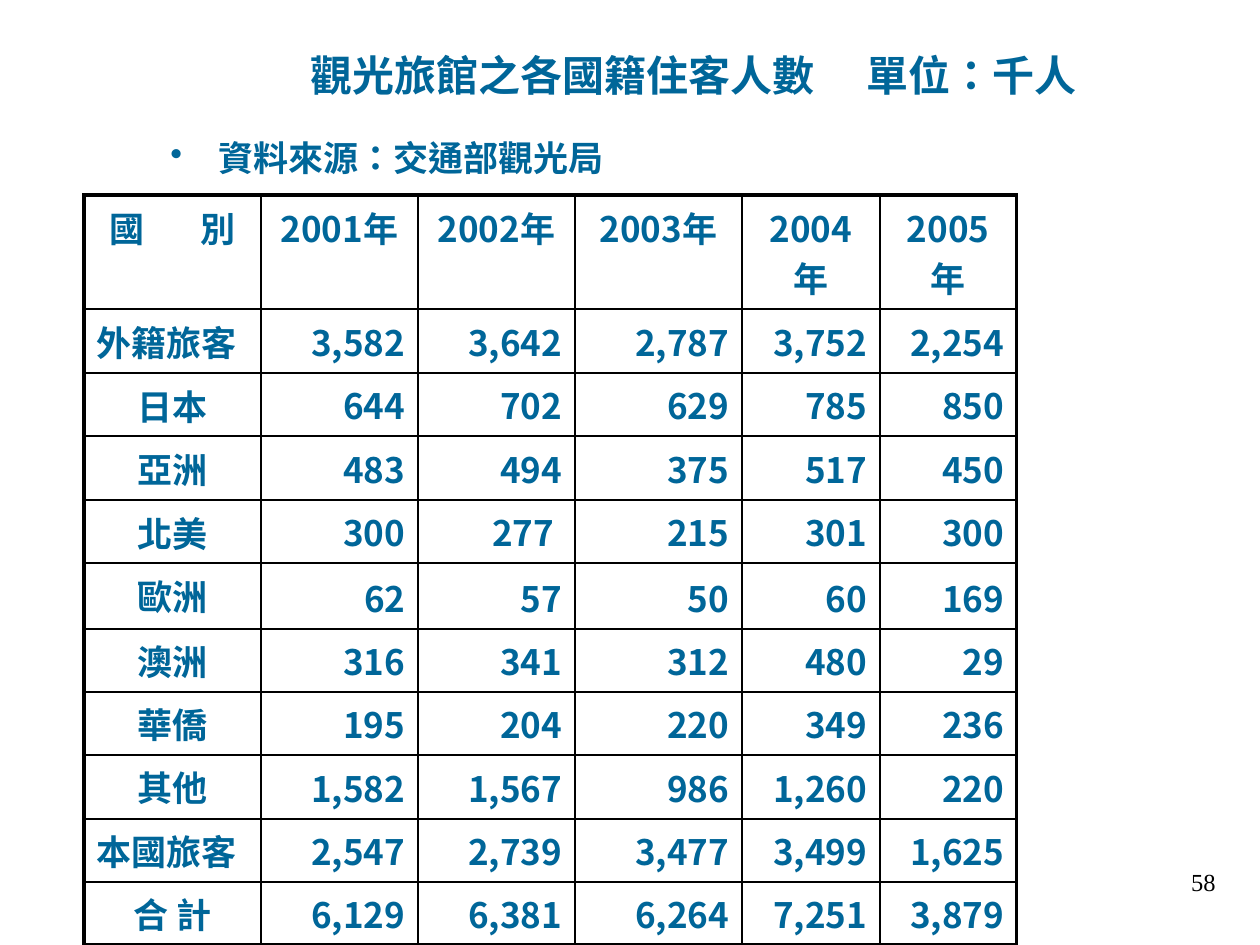
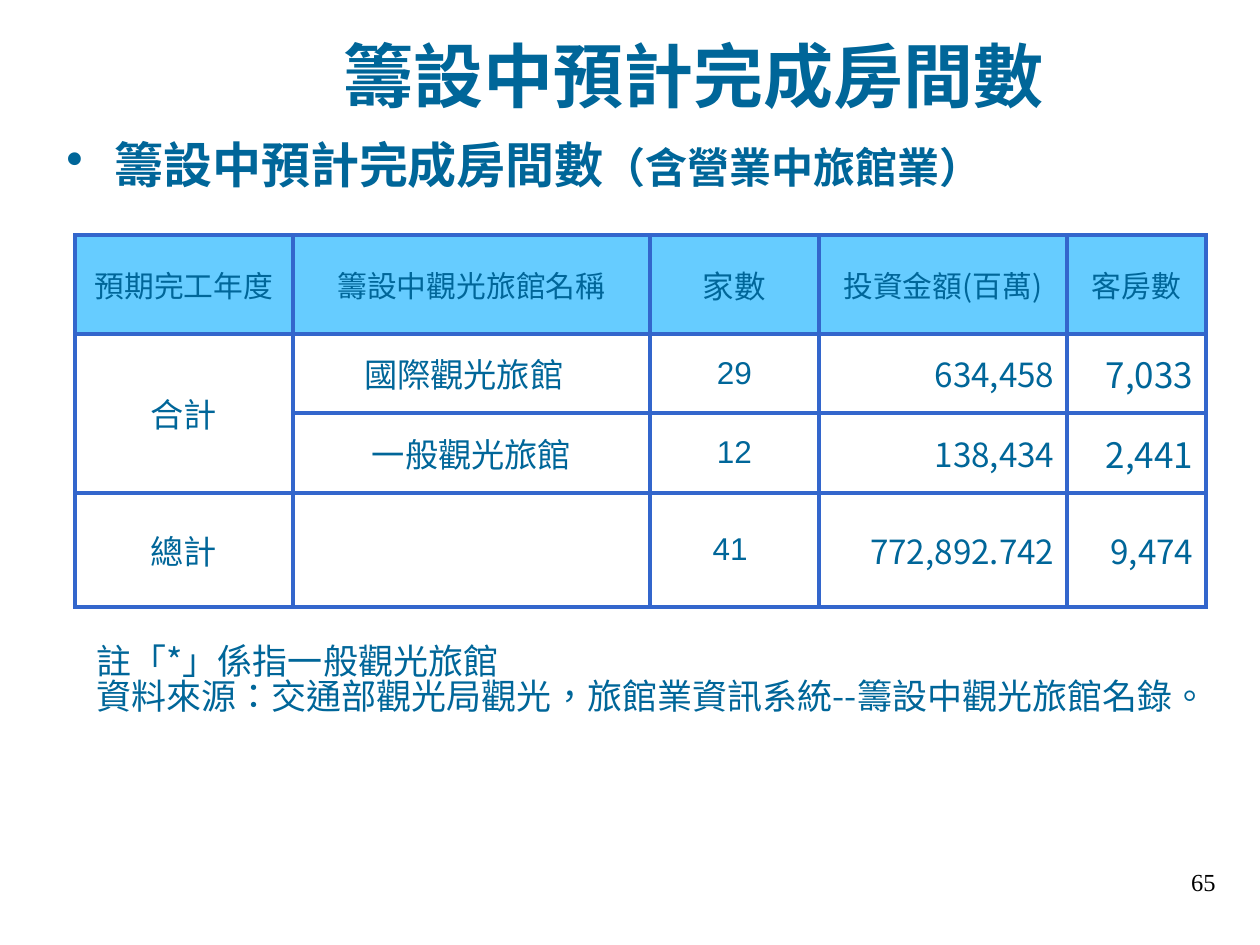
"""Builds two slides of hotel statistics, each with a table."""
from dataclasses import dataclass
from lxml.etree import SubElement
from pptx import Presentation
from pptx.dml.color import RGBColor
from pptx.enum.text import MSO_ANCHOR, PP_ALIGN
from pptx.oxml import parse_xml
from pptx.oxml.ns import nsdecls, qn
from pptx.util import Emu, Pt


@dataclass(frozen=True)
class Theme:
    """Colours, fonts and type sizes."""
    ink: str = "006699"
    black: str = "000000"
    head: str = "66CCFF"
    white: str = "FFFFFF"
    rule: str = "3366CC"
    serif: str = "Times New Roman"
    sans: str = "Arial"
    cjk: str = "Noto Sans CJK JP"
    han: str = "Noto Sans CJK SC"
    page: int = 14
    body: int = 20
    mid: int = 24
    lead: int = 28
    large: int = 40


T = Theme()
LEFT, MID, RIGHT = PP_ALIGN.LEFT, PP_ALIGN.CENTER, PP_ALIGN.RIGHT
HANG = 48
BOLD = dict(name=T.serif, bold=True)

GUESTS = [
    ("國 別", "2001年", "2002年", "2003年", "2004年", "2005年"),
    ("外籍旅客", "3,582", "3,642", "2,787", "3,752", "2,254"),
    ("日本", "644", "702", "629", "785", "850"),
    ("亞洲", "483", "494", "375", "517", "450"),
    ("北美", "300", "277 ", "215", "301", "300"),
    ("歐洲", "62", "57", "50", "60", "169"),
    ("澳洲", "316", "341", "312", "480", "29"),
    ("華僑", "195", "204", "220", "349", "236"),
    ("其他", "1,582", "1,567", "986", "1,260", "220"),
    ("本國旅客", "2,547", "2,739", "3,477", "3,499", "1,625"),
    ("合 計", "6,129", "6,381", "6,264", "7,251", "3,879"),
]
GUEST_COLS = (177, 157, 157, 167, 138, 137)
GUEST_ROWS = (114, 64, 63, 64, 63, 66, 63, 63, 64, 63, 63)

ROOMS = [
    ("預期完工年度", "籌設中觀光旅館名稱", "家數", "投資金額(百萬)", "客房數"),
    ("合計", "國際觀光旅館", "29", "634,458", "7,033"),
    (None, "一般觀光旅館", "12", "138,434", "2,441"),
    ("總計", "", "41 ", "772,892.742", "9,474"),
]
ROOM_COLS = (218, 357, 169, 248, 139)
ROOM_ROWS = (99, 79, 80, 114)
ROOM_SIZES = [(17, 17, 18, 17, 17), (19, 19, 18, 19, 20),
              (19, 19, 18, 19, 20), (19, 19, 18, 19, 19)]
ROOM_PADS = {(0, 3): dict(margin_left=18, margin_right=18),
             (1, 1): dict(margin_right=28)}

NOTES = ["註「*」係指一般觀光旅館",
         "資料來源：交通部觀光局觀光，旅館業資訊系統--籌設中觀光旅館名錄。"]

PAGES = [
    dict(no="58", size=T.mid, left=158,
         title=[("觀光旅館之各國籍住客人數", {}), (" ", dict(gap=24)),
                ("單位：千人", {})],
         lead=[("資料來源：交通部觀光局", dict(size=T.body))]),
    dict(no="65", size=T.large, left=54,
         title=[("籌設中預計完成房間數", {})],
         lead=[("籌設中預計完成房間數", dict(size=T.lead)),
               ("（含營業中旅館業）", dict(size=T.mid))]),
]


def px(num):
    """Turn px into EMU."""
    return Emu(round(num * 914400 / 126))


def put(obj, vals):
    """Set each named attribute."""
    for key, val in vals.items():
        setattr(obj, key, val)


def write(para, runs, look, **form):
    """Fill a paragraph with runs in one look."""
    put(para, form)
    for text, more in runs:
        vals = dict(look, **more)
        gap, tint = vals.pop("gap", 0), vals.pop("tint", T.ink)
        vals["size"] = Pt(vals["size"])
        run = para.add_run()
        run.text = text
        put(run.font, vals)
        run.font.color.rgb = RGBColor.from_string(tint)
        props = run._r.get_or_add_rPr()
        props.set("lang", "zh-TW")
        if gap:
            props.set("spc", str(gap * 100))
        SubElement(props, qn("a:ea")).set("typeface", T.cjk)


def hang(para):
    """Give a paragraph a hanging indent."""
    props = para._p.get_or_add_pPr()
    props.set("marL", str(px(HANG)))
    props.set("indent", str(-px(HANG)))
    return props


def box(slide, area, anchor=MSO_ANCHOR.TOP):
    """Add a wrapping text box."""
    frame = slide.shapes.add_textbox(*map(px, area)).text_frame
    put(frame, dict(word_wrap=True, vertical_anchor=anchor))
    return frame


def edge(cell, sides):
    """Draw the four cell borders."""
    props = cell._tc.get_or_add_tcPr()
    for spot, (side, (tint, width)) in enumerate(sides.items()):
        props.insert(spot, parse_xml(
            f'<a:ln{side} {nsdecls("a")} w="{Pt(width)}"><a:solidFill>'
            f'<a:srgbClr val="{tint}"/></a:solidFill></a:ln{side}>'))


def grid(slide, spot, cols, rows):
    """Add a plain table of given column and row sizes."""
    area = (*spot, sum(cols), sum(rows))
    table = slide.shapes.add_table(len(rows), len(cols), *map(px, area)).table
    put(table, dict(first_row=False, horz_banding=False))
    for col, width in zip(table.columns, cols):
        col.width = px(width)
    for row, height in zip(table.rows, rows):
        row.height = px(height)
    return table


def base(deck, page):
    """Add a slide with number, title and lead line."""
    slide = deck.slides.add_slide(deck.slide_layouts[6])
    write(box(slide, (966, 861, 262, 63)).paragraphs[0], [(page["no"], {})],
          dict(name=T.serif, size=T.page, tint=T.black), alignment=RIGHT)
    write(box(slide, (158, 35, 1071, 79), MSO_ANCHOR.MIDDLE).paragraphs[0],
          page["title"], dict(BOLD, size=page["size"]), alignment=MID)
    para = box(slide, (page["left"], 135, 1071, 704)).paragraphs[0]
    SubElement(hang(para), qn("a:buChar")).set("char", "•")
    write(para, page["lead"], BOLD, line_spacing=0.9)
    return slide


def guests(slide):
    """Add the table of guests by country."""
    table = grid(slide, (84, 195), GUEST_COLS, GUEST_ROWS)
    end, foot = len(GUEST_COLS) - 1, len(GUEST_ROWS) - 1
    look = dict(name=T.han, size=T.body, bold=True)
    for r, row in enumerate(GUESTS):
        for c, text in enumerate(row):
            cell = table.cell(r, c)
            outer = dict(L=c == 0, R=c == end, T=r == 0, B=r == foot)
            edge(cell, {s: (T.black, 2.25 if on else 1)
                        for s, on in outer.items()})
            cell.fill.background()
            value = r and c
            cell.vertical_anchor = MSO_ANCHOR.BOTTOM if value else MSO_ANCHOR.TOP
            align = RIGHT if value else LEFT if len(text) == 4 else MID
            runs = [(text, {})]
            if not r and not c:
                left, right = text.split()
                runs = [(left, {}), (" ", dict(gap=27)), (right, {})]
            write(cell.text_frame.paragraphs[0], runs, look, alignment=align)


def rooms(slide):
    """Add the table of planned rooms and its notes."""
    table = grid(slide, (75, 235), ROOM_COLS, ROOM_ROWS)
    table.cell(1, 0).merge(table.cell(2, 0))
    for r, row in enumerate(ROOMS):
        for c, text in enumerate(row):
            cell = table.cell(r, c)
            edge(cell, dict.fromkeys("LRTB", (T.rule, 2.25)))
            cell.fill.solid()
            cell.fill.fore_color.rgb = RGBColor.from_string(
                T.white if r else T.head)
            cell.vertical_anchor = MSO_ANCHOR.MIDDLE
            pads = ROOM_PADS.get((r, c), {})
            put(cell, {key: px(val) for key, val in pads.items()})
            if text:
                para = cell.text_frame.paragraphs[0]
                hang(para)
                look = dict(name=T.sans if c == 2 else T.cjk,
                            size=ROOM_SIZES[r][c], bold=False)
                write(para, [(text, {})], look,
                      alignment=RIGHT if r and c > 2 else MID)
    frame = box(slide, (84, 612, 1111, 139), MSO_ANCHOR.MIDDLE)
    for n, text in enumerate(NOTES):
        para = frame.add_paragraph() if n else frame.paragraphs[0]
        write(para, [(text, {})], dict(name=T.cjk, size=T.body),
              line_spacing=0.83)


def main():
    """Build and save the deck."""
    deck = Presentation()
    put(deck, dict(slide_width=px(1260), slide_height=px(945)))
    for page, fill in zip(PAGES, (guests, rooms)):
        fill(base(deck, page))
    deck.save("out.pptx")


if __name__ == "__main__":
    main()
